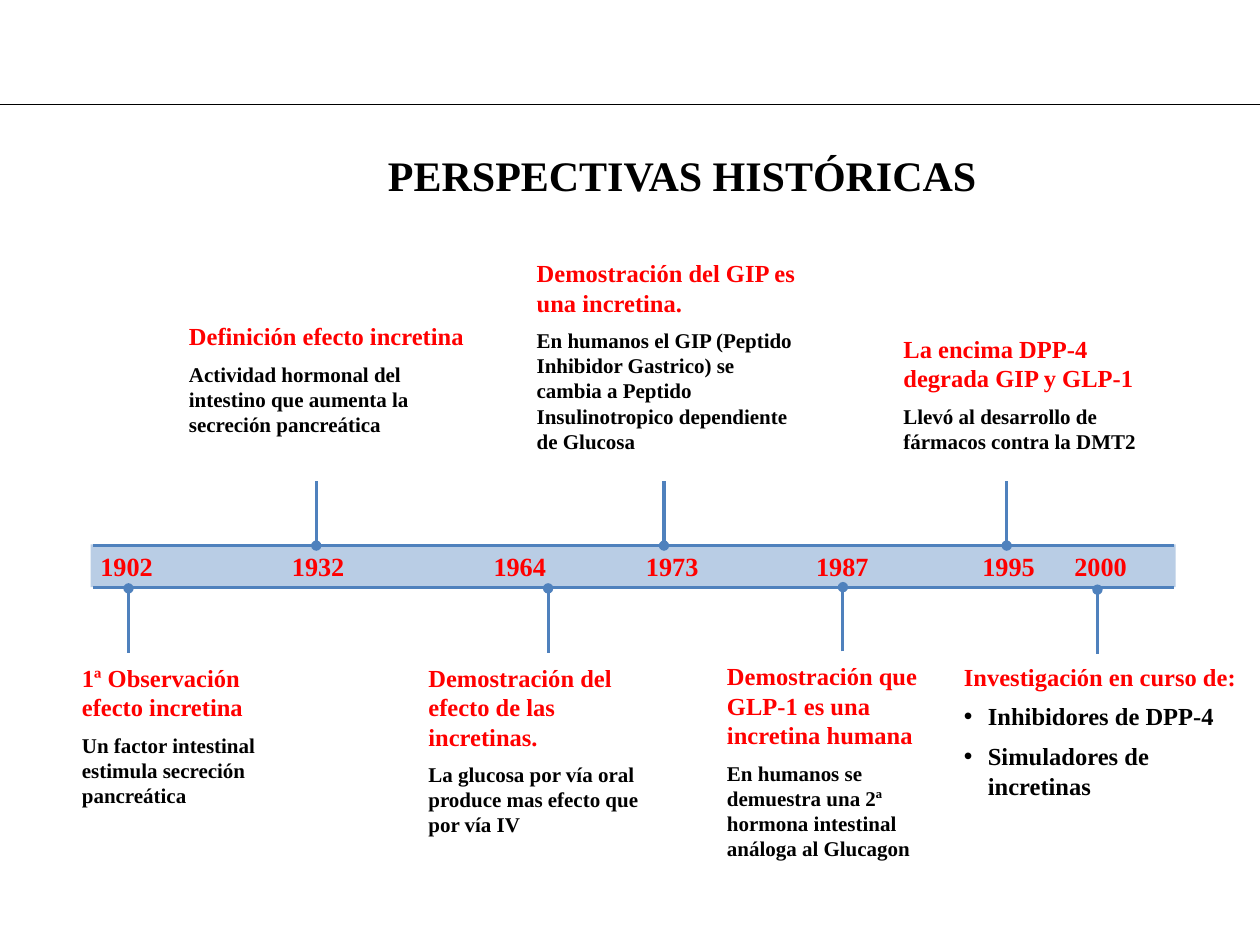
from lxml.etree import SubElement
from pptx import Presentation
from pptx.dml.color import RGBColor
from pptx.enum.shapes import MSO_CONNECTOR as CONN, MSO_SHAPE as SHAPE
from pptx.enum.text import MSO_ANCHOR as ANCHOR, MSO_AUTO_SIZE as FIT, PP_ALIGN as ALIGN
from pptx.oxml.ns import qn
from pptx.util import Inches, Pt

COLORS = {"heading": "FF0000", "text": "000000", "band": "B9CDE5", "line": "4F81BD"}
FONT = "Times New Roman"
COLS, ROWS = 100, 75
CELL = Inches(0.1)
BAND_LEFT, BAND_RIGHT, BAND_TOP, BAND_BOTTOM = 7.4, 93.2, 43.3, 46.6
STEM = 5.1
YEAR_TOP, YEAR_W, YEAR_H = 43.7, 7.1, 2.5

# year, year left, stem column, stem end row, text box, heading, detail
EVENTS = [
    ("1902", 6.5, 10.2, 46.7, (6.5, 52.6, 14.1, 11.6),
     "1ª Observación efecto incretina",
     "Un factor intestinal estimula secreción pancreática"),
    ("1932", 21.7, 25.1, BAND_TOP, (15, 25.5, 22.3, 9.3),
     "Definición efecto incretina",
     "Actividad hormonal del intestino que aumenta la secreción pancreática"),
    ("1964", 37.7, 43.5, 46.7, (34, 52.6, 19.2, 11.6),
     "Demostración del efecto de las incretinas.",
     "La glucosa por vía oral produce mas efecto que por vía IV"),
    ("1973", 49.8, 52.7, BAND_TOP, (42.6, 20.5, 20.6, 15.7),
     "Demostración del GIP es una incretina.",
     "En humanos el GIP (Peptido Inhibidor Gastrico) se cambia a Peptido "
     "Insulinotropico dependiente de Glucosa"),
    ("1987", 63.3, 66.9, BAND_BOTTOM, (57.7, 52.5, 18.4, 16),
     "Demostración que GLP-1 es una incretina humana",
     "En humanos se demuestra una 2ª hormona intestinal análoga al Glucagon"),
    ("1995", 76.5, 79.9, BAND_TOP, (71.7, 26.5, 19.2, 9.6),
     "La encima DPP-4 degrada GIP y GLP-1",
     "Llevó al desarrollo de fármacos contra la DMT2"),
    ("2000", 83.8, 87.1, 46.8, (76.5, 52.5, 22.5, 11.1),
     "Investigación en curso de:",
     ["Inhibidores de DPP-4", "Simuladores de incretinas"]),
]


def grid(*cells):
    """Turn grid columns and rows into slide lengths."""
    return [round(c * CELL) for c in cells]


def place(sp, box):
    """Move a placeholder to a grid box."""
    sp.left, sp.top, sp.width, sp.height = grid(*box)
    return sp


def prepare(sp):
    """Give a text shape wrapping, no margins and a fixed size."""
    tf = sp.text_frame
    tf.word_wrap, tf.auto_size = True, FIT.NONE
    tf.margin_left = tf.margin_top = tf.margin_right = tf.margin_bottom = 0
    return tf


def write(tf, text, size=14, color="text", align=ALIGN.LEFT, bullet=False):
    """Add a bold paragraph, spaced from the one before it."""
    first = not tf.text
    p = tf.paragraphs[0] if first else tf.add_paragraph()
    p.alignment = align
    p.space_before = Pt(0 if first else 6)
    pPr = p._p.get_or_add_pPr()
    indent = Inches(0.19) if bullet else 0
    pPr.set("marL", str(indent))
    pPr.set("indent", str(-indent))
    if bullet:
        SubElement(pPr, qn("a:buFont"), typeface="Arial")
        SubElement(pPr, qn("a:buChar"), char="•")
    else:
        SubElement(pPr, qn("a:buNone"))
    r = p.add_run()
    r.text = text
    r.font.name, r.font.size, r.font.bold = FONT, Pt(size), True
    r.font.color.rgb = RGBColor.from_string(COLORS[color])


def add_line(slide, x1, y1, x2, y2, color="line", width=1.75, dot=False):
    """Draw a straight line, with a dot at its end if asked."""
    line = slide.shapes.add_connector(CONN.STRAIGHT, *grid(x1, y1, x2, y2))
    line.line.color.rgb = RGBColor.from_string(COLORS[color])
    line.line.width = Pt(width)
    if dot:
        SubElement(line.line._get_or_add_ln(), qn("a:tailEnd"), type="oval")
    SubElement(line._element.spPr, qn("a:effectLst"))


def add_band(slide):
    """Draw the time band and its two edges."""
    band = slide.shapes.add_shape(SHAPE.RECTANGLE, *grid(7.2, 43.2, 86.1, 3.4))
    band.shadow.inherit = False
    band.fill.solid()
    band.fill.fore_color.rgb = RGBColor.from_string(COLORS["band"])
    band.line.fill.background()
    for y in (BAND_TOP, BAND_BOTTOM):
        add_line(slide, BAND_LEFT, y, BAND_RIGHT, y)


def add_event(slide, body, year, left, stem_x, stem_y, box, heading, detail):
    """Add the year, stem and text of one event."""
    label = slide.shapes.add_textbox(*grid(left, YEAR_TOP, YEAR_W, YEAR_H))
    write(prepare(label), year, size=15, color="heading", align=ALIGN.CENTER)
    start = stem_y - STEM if stem_y == BAND_TOP else stem_y + STEM
    add_line(slide, stem_x, start, stem_x, stem_y, dot=True)
    is_list = isinstance(detail, list)
    sp = place(body, box) if is_list else slide.shapes.add_textbox(*grid(*box))
    tf = prepare(sp)
    write(tf, heading, color="heading")
    for text in detail if is_list else [detail]:
        write(tf, text, size=14 if is_list else 12, bullet=is_list)


def main():
    """Build the timeline slide."""
    prs = Presentation()
    prs.slide_width, prs.slide_height = grid(COLS, ROWS)
    slide = prs.slides.add_slide(prs.slide_layouts[1])
    title, body = slide.placeholders
    add_line(slide, 0, 8.3, COLS, 8.3, color="text", width=0.75)
    tf = prepare(place(title, (23.5, 9.5, 61.3, 8.7)))
    tf.vertical_anchor = ANCHOR.MIDDLE
    write(tf, "PERSPECTIVAS HISTÓRICAS", size=24, align=ALIGN.CENTER)
    add_band(slide)
    for event in EVENTS:
        add_event(slide, body, *event)
    prs.save("out.pptx")


if __name__ == "__main__":
    main()
